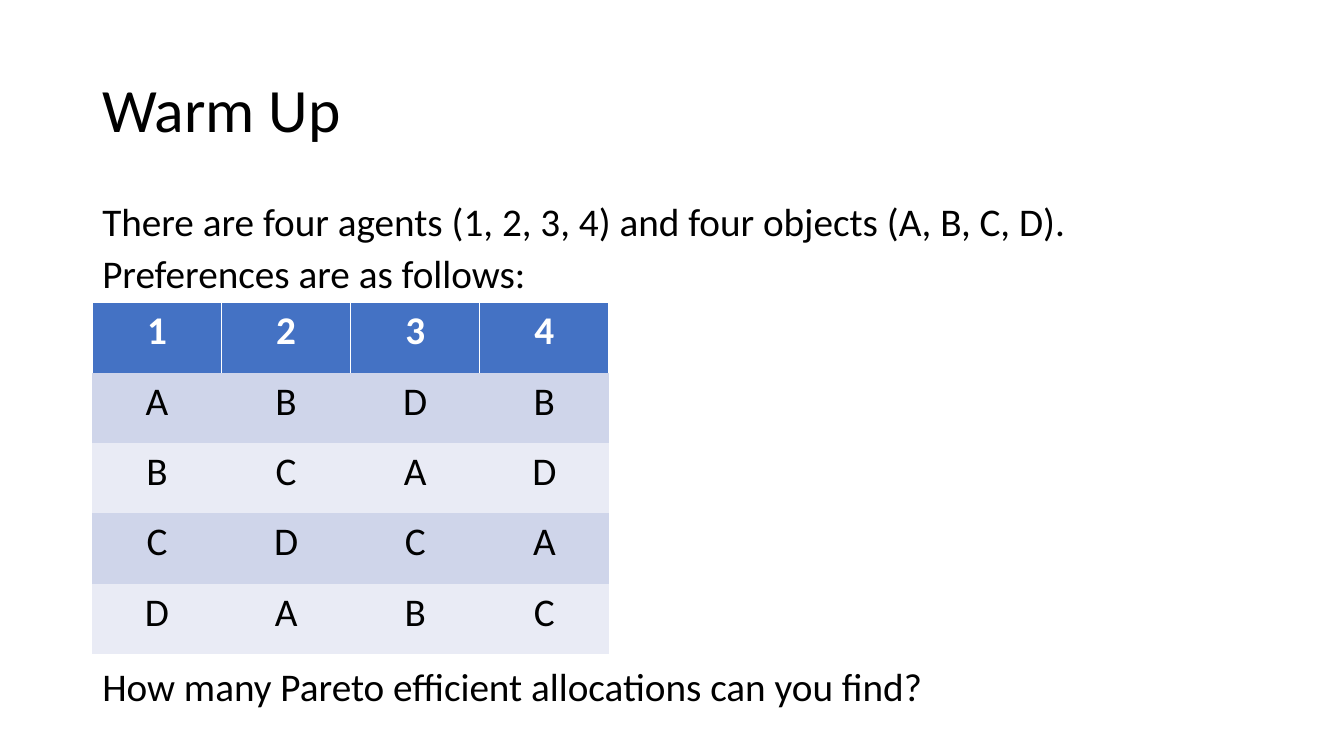
from dataclasses import dataclass

from lxml.etree import SubElement
from pptx import Presentation
from pptx.dml.color import RGBColor
from pptx.enum.text import MSO_ANCHOR, PP_ALIGN
from pptx.oxml.ns import qn
from pptx.util import Emu, Pt


@dataclass(frozen=True)
class Theme:
    font: str = "Calibri"
    title: int = 44
    body: int = 28
    ink: str = "000000"
    white: str = "FFFFFF"
    head: str = "4472C4"
    bands: tuple = ("CFD5EA", "E9EBF5")


THEME = Theme()
PLAIN = "{2D5ABB26-0587-4C30-8999-92F81FD0307C}"  # table style without grid
LEFT, WIDTH = 88, 1104
COL, ROW = 123, 67
PREFS = ["1234", "ABDB", "BCAD", "CDCA", "DABC"]


def px(num):
    return Emu(num * 9525)


def apply(item, form):
    for name, value in form.items():
        setattr(item, name, value)


def style(para, text, size, color, bold=False, **form):
    apply(para, form)
    run = para.add_run()
    run.text = text
    apply(run.font, {"name": THEME.font, "size": Pt(size), "bold": bold})
    run.font.color.rgb = RGBColor.from_string(color)


def add_text(slide, lines, top, height, size, anchor=MSO_ANCHOR.TOP, **form):
    box = slide.shapes.add_textbox(px(LEFT), px(top), px(WIDTH), px(height))
    frame = box.text_frame
    apply(frame, {"word_wrap": True, "vertical_anchor": anchor})
    for num, line in enumerate(lines):
        para = frame.add_paragraph() if num else frame.paragraphs[0]
        style(para, line, size, THEME.ink, **form)


def add_edges(cell):
    props = cell._tc.get_or_add_tcPr()
    for num, side in enumerate(("lnL", "lnR", "lnT")):
        edge = props.makeelement(qn(f"a:{side}"), {"w": str(Pt(1))})
        fill = SubElement(edge, qn("a:solidFill"))
        SubElement(fill, qn("a:srgbClr"), val=THEME.white)
        props.insert(num, edge)  # borders come before the fill


def add_grid(slide, rows, top):
    cols = len(rows[0])
    frame = slide.shapes.add_table(len(rows), cols, px(LEFT), px(top),
                                   px(COL * cols), px(ROW * len(rows)))
    table = frame.table
    apply(table, {"first_row": True, "horz_banding": False})
    table._tbl.tblPr.find(qn("a:tableStyleId")).text = PLAIN
    for col in table.columns:
        col.width = px(COL)
    for r, row in enumerate(rows):
        table.rows[r].height = px(ROW)
        head = r == 0
        fill = THEME.head if head else THEME.bands[(r - 1) % 2]
        color = THEME.white if head else THEME.ink
        for c, text in enumerate(row):
            cell = table.cell(r, c)
            cell.fill.solid()
            cell.fill.fore_color.rgb = RGBColor.from_string(fill)
            style(cell.text_frame.paragraphs[0], text, THEME.body, color,
                  bold=head, alignment=PP_ALIGN.CENTER)
            if head:
                add_edges(cell)


def main():
    deck = Presentation()
    apply(deck, {"slide_width": px(1280), "slide_height": px(720)})
    slide = deck.slides.add_slide(deck.slide_layouts[6])

    # Title
    add_text(slide, ["Warm Up"], 38, 139, THEME.title,
             anchor=MSO_ANCHOR.MIDDLE, line_spacing=0.9)

    # Setting and question around the table
    tight = {"line_spacing": 0.8, "space_before": Pt(10)}
    add_text(slide, ["There are four agents (1, 2, 3, 4) and four objects (A, B, C, D).",
                     "Preferences are as follows:"], 192, 96, THEME.body, **tight)
    add_text(slide, ["How many Pareto efficient allocations can you find?"],
             635, 50, THEME.body, **tight)

    # Preferences, one agent per column
    add_grid(slide, PREFS, 288)

    deck.save("out.pptx")


if __name__ == "__main__":
    main()
